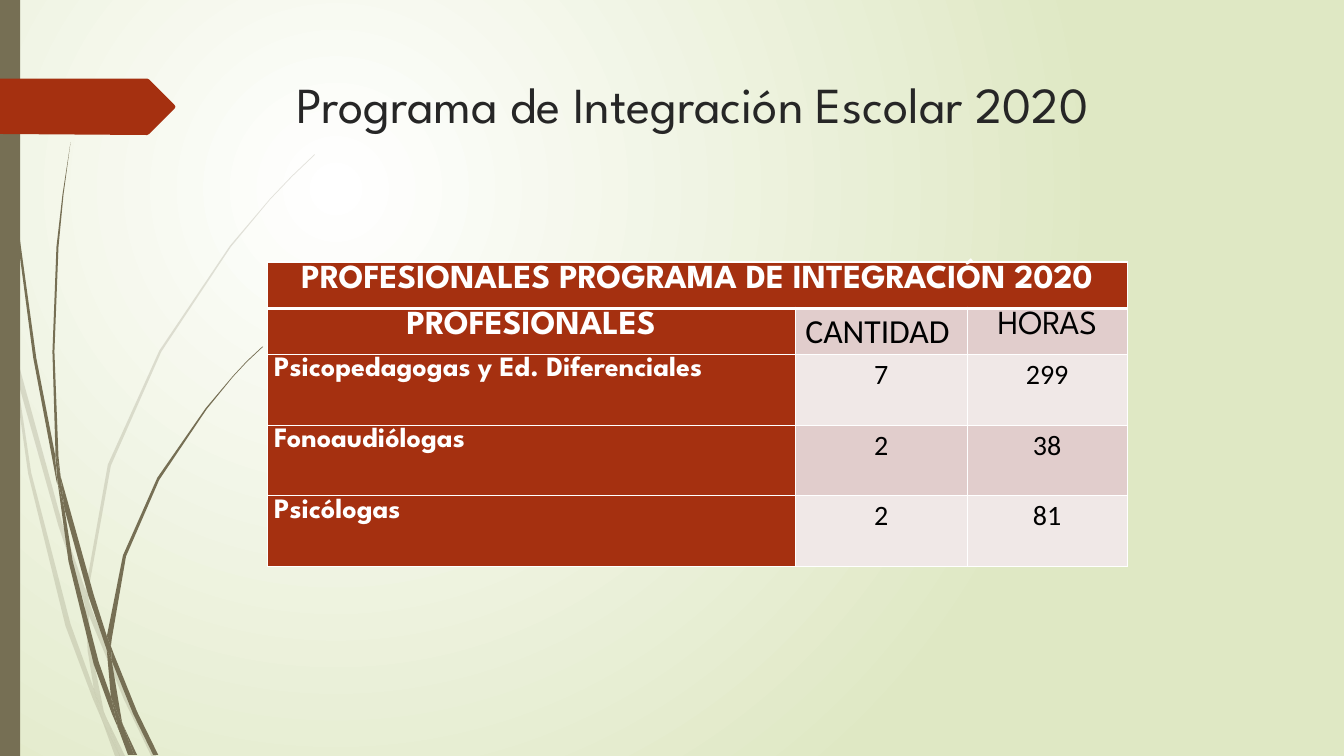
import pptx
import pptx.util
import pptx.dml.color
import pptx.enum.shapes
import pptx.enum.text
import pptx.oxml
import pptx.oxml.ns
from dataclasses import dataclass

Inches = pptx.util.Inches
Align = pptx.enum.text.PP_ALIGN
Anchor = pptx.enum.text.MSO_ANCHOR
qn = pptx.oxml.ns.qn


@dataclass(frozen=True)
class Theme:
    rust: str = "A53010"
    olive: str = "766F54"
    pale: str = "DFE8C4"
    white: str = "FFFFFF"
    ink: str = "262626"
    black: str = "000000"
    rose: str = "E1CDCC"
    blush: str = "F0E8E7"
    head: str = "League Spartan"
    body: str = "Calibri"
    big: int = 36
    mid: int = 24
    small: int = 20


T = Theme()
WIDE, HIGH = 13.33, 7.5
FAINT = 20  # opacity in percent

# Outlines in inches from the slide's top left corner
BACK_GRASS = [
    [(.58, 5.22), (.84, 5.99), (.85, 5.86), (.62, 5.2), (.14, 3.45), (.17, 3.76)],
    [(.92, 6.07), (.88, 5.96), (.88, 6.1), (1.23, 6.94), (1.5, 7.5), (1.55, 7.5),
     (1.27, 6.92)],
    [(1.19, 7.5), (1.24, 7.5), (1.05, 7.11)],
    [(.93, 6.83), (.7, 6.19), (.31, 4.69), (.17, 3.76), (.11, 3.5), (.28, 4.7),
     (.65, 6.21), (.92, 6.93), (1.01, 7.14), (.99, 7.07)],
    [(.84, 5.99), (.87, 6.46), (.93, 6.83), (.96, 6.92), (1.05, 7.11), (1.03, 7.06),
     (.91, 6.46), (.88, 6.1), (.88, 6.08)],
    [(.88, 5.84), (1.1, 4.62), (1.6, 3.49), (2.29, 2.45), (2.68, 1.98), (2.9, 1.75),
     (3.12, 1.54), (3.12, 1.53), (2.89, 1.75), (2.68, 1.97), (2.28, 2.44), (1.58, 3.48),
     (1.07, 4.61), (.85, 5.84), (.85, 5.86), (.88, 5.96)],
    [(1.01, 7.14), (1.14, 7.5), (1.19, 7.5)],
    [(.88, 6.08), (.88, 6.1), (.88, 5.96), (.85, 5.86), (.84, 5.99)],
    [(.96, 6.92), (.93, 6.83), (.99, 7.07), (1.01, 7.14), (1.19, 7.5), (1.05, 7.11)],
]
FRONT_GRASS = [
    [(.07, 1.1), (.17, 2.33), (.33, 3.55), (.56, 4.77), (.57, 4.81), (.55, 4.57),
     (.55, 4.53), (.36, 3.55), (.19, 2.32), (.08, 1.09), (.05, .48), (.04, 0), (.03, 0),
     (.04, .48)],
    [(.88, 5.92), (1.06, 6.45), (1.06, 6.31), (.93, 5.9), (.6, 4.72), (.64, 5.05)],
    [(1.13, 6.49), (1.1, 6.41), (1.11, 6.56), (1.32, 7.08), (1.52, 7.49), (1.57, 7.49),
     (1.36, 7.06)],
    [(1.1, 6.91), (.98, 6.57), (.72, 5.56), (.64, 5.05), (.57, 4.77), (.68, 5.57),
     (.93, 6.59), (1.11, 7.08), (1.17, 7.22), (1.16, 7.17)],
    [(.6, 4.72), (.58, 4.53), (.54, 3.49), (.58, 2.45), (.63, 1.93), (.7, 1.41),
     (.62, 1.93), (.56, 2.45), (.52, 3.49), (.55, 4.49)],
    [(1.33, 7.49), (1.36, 7.49), (1.22, 7.19)],
    [(.57, 4.77), (.64, 5.05), (.6, 4.72), (.55, 4.49), (.55, 4.53)],
    [(1.11, 6.33), (1.25, 5.52), (1.58, 4.76), (2.05, 4.06), (2.31, 3.74), (2.45, 3.59),
     (2.61, 3.44), (2.6, 3.44), (2.45, 3.58), (2.31, 3.73), (2.04, 4.05), (1.56, 4.74),
     (1.22, 5.51), (1.06, 6.31), (1.1, 6.41)],
    [(1.17, 7.22), (1.27, 7.49), (1.31, 7.49)],
    [(1.06, 6.45), (1.1, 6.91), (1.16, 7.06), (1.22, 7.19), (1.21, 7.16), (1.11, 6.56),
     (1.09, 6.51)],
    [(1.06, 6.45), (1.09, 6.51), (1.11, 6.56), (1.1, 6.41), (1.06, 6.31)],
    [(1.16, 7.06), (1.1, 6.91), (1.16, 7.17), (1.17, 7.22), (1.3, 7.49), (1.33, 7.49),
     (1.22, 7.19)],
]
STAFF = [("Psicopedagogas y Ed. Diferenciales", "7", "299"),
         ("Fonoaudiólogas", "2", "38"),
         ("Psicólogas", "2", "81")]


def rgb(code):
    return pptx.dml.color.RGBColor.from_string(code)


def write(frame, text, size, font=T.head, color=T.white, bold=False,
          align=Align.LEFT, gap=None):
    para = frame.paragraphs[0]
    para.alignment = align
    para.line_spacing = gap
    run = para.add_run()
    run.text = text
    run.font.name, run.font.size, run.font.bold = font, pptx.util.Pt(size), bold
    run.font.color.rgb = rgb(color)


def paint(shape, color, alpha=None):
    shape.shadow.inherit = False
    shape.fill.solid()
    shape.fill.fore_color.rgb = rgb(color)
    shape.line.fill.background()
    if alpha:
        tint = shape.element.spPr.find(".//" + qn("a:srgbClr"))
        tint.append(pptx.oxml.parse_xml(
            f'<a:alpha {pptx.oxml.ns.nsdecls("a")} val="{alpha * 1000}"/>'))


def trace(shapes, points, color, alpha=None):
    """Draw one closed, filled outline."""
    start, *rest = [(Inches(x), Inches(y)) for x, y in points]
    pen = shapes.build_freeform(*start)
    pen.add_line_segments(rest, close=True)
    paint(pen.convert_to_shape(), color, alpha)


def glow(slide):
    """Fill the background with a round gradient, brightest at upper left."""
    fill = slide.background.fill
    fill.gradient()
    for stop, color in zip(fill.gradient_stops, (T.white, T.pale)):
        stop.color.rgb = rgb(color)
    grad = slide.element.find(".//" + qn("a:gradFill"))
    grad.replace(grad.find(qn("a:lin")), pptx.oxml.parse_xml(
        f'<a:path {pptx.oxml.ns.nsdecls("a")} path="circle"><a:fillToRect '
        'l="50000" t="50000" r="100000" b="100000"/></a:path>'))


def margin(slide):
    """Place the grass, the side bar and the title's arrow."""
    for blades, alpha in ((BACK_GRASS, FAINT), (FRONT_GRASS, None)):
        group = slide.shapes.add_group_shape()
        for blade in blades:
            trace(group.shapes, blade, T.olive, alpha)
    rect = pptx.enum.shapes.MSO_SHAPE.RECTANGLE
    bar = slide.shapes.add_shape(rect, 0, 0, Inches(.2), Inches(HIGH))
    paint(bar, T.olive)
    top, low, tip = .78, 1.34, 1.74
    mid = (top + low) / 2
    trace(slide.shapes, [(0, top), (1.46, top), (1.48, top + .01), (tip - .01, mid - .02),
                         (tip, mid), (tip - .01, mid + .02), (1.48, low - .01),
                         (1.46, low), (0, low - .01)], T.rust)


def heading(slide, text, left, top, wide, high):
    title = slide.shapes.title
    title.left, title.top = Inches(left), Inches(top)
    title.width, title.height = Inches(wide), Inches(high)
    frame = title.text_frame
    frame.word_wrap = True
    frame.auto_size = pptx.enum.text.MSO_AUTO_SIZE.NONE
    frame.vertical_anchor = Anchor.MIDDLE
    frame.margin_bottom = Inches(.21)
    write(frame, text, T.big, color=T.ink)


def edge(cell, **widths):
    """Set white borders; widths are points for the sides L, R, T and B."""
    props = cell._tc.get_or_add_tcPr()
    for spot, (side, width) in enumerate(widths.items()):
        props.insert(spot, pptx.oxml.parse_xml(
            f'<a:ln{side} {pptx.oxml.ns.nsdecls("a")} w="{width * 12700}"><a:solidFill>'
            f'<a:srgbClr val="{T.white}"/></a:solidFill></a:ln{side}>'))


def fill_cell(cell, text, row, col):
    label = row == 0 or col == 0
    cell.margin_left = cell.margin_right = Inches(.07)
    cell.margin_top, cell.margin_bottom = Inches(.01), 0
    cell.vertical_anchor = Anchor.TOP
    cell.fill.solid()
    cell.fill.fore_color.rgb = rgb(T.rust if label else T.rose if row % 2 else T.blush)
    edge(cell, L=1, R=1, T=3 if row == 1 else 1, B=1 if row else 3)
    if text:
        write(cell.text_frame, text, T.mid if row < 2 else T.small,
              font=T.head if label or text == "HORAS" else T.body,
              color=T.white if label else T.black, bold=label, gap=1.06,
              align=Align.LEFT if row > 1 and col == 0 else Align.CENTER)


def staff_table(slide, left, top, wide, high):
    rows = [("PROFESIONALES PROGRAMA DE INTEGRACIÓN 2020", "", ""),
            ("PROFESIONALES", "CANTIDAD ", "HORAS"), *STAFF]
    table = slide.shapes.add_table(len(rows), 3, Inches(left), Inches(top),
                                   Inches(wide), Inches(high)).table
    table.first_row = table.horz_banding = False
    for column, share in zip(table.columns, (.614, .2, .186)):
        column.width = Inches(wide * share)
    for r, texts in enumerate(rows):
        table.rows[r].height = Inches(.46 if r < 2 else (high - .92) / len(STAFF))
        for c, text in enumerate(texts):
            fill_cell(table.cell(r, c), text, r, c)
    table.cell(0, 0).merge(table.cell(0, 2))


def main():
    deck = pptx.Presentation()
    deck.slide_width, deck.slide_height = Inches(WIDE), Inches(HIGH)
    slide = deck.slides.add_slide(deck.slide_layouts[5])
    glow(slide)
    margin(slide)
    heading(slide, "Programa de Integración Escolar 2020", 2.84, .68, 9.75, .85)
    staff_table(slide, 2.65, 2.6, 8.53, 3.02)
    deck.save("out.pptx")


if __name__ == "__main__":
    main()
